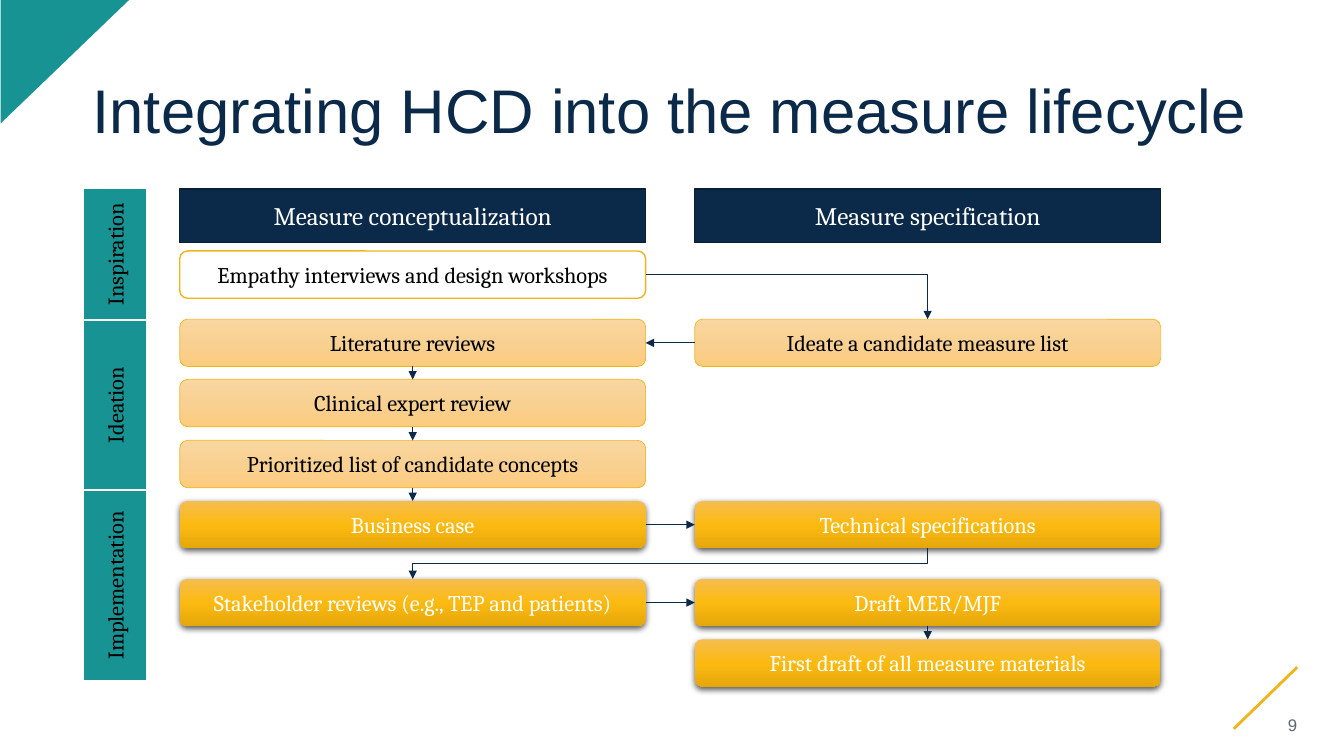
"""Builds the slide on human-centred design in the measure lifecycle."""
from lxml import etree
from pptx import Presentation
from pptx.dml.color import RGBColor
from pptx.enum.shapes import MSO_CONNECTOR as Link, MSO_SHAPE as Form
from pptx.enum.text import MSO_ANCHOR as Anchor, MSO_AUTO_SIZE as AutoSize, PP_ALIGN as Align
from pptx.oxml.ns import qn
from pptx.util import Pt

NAVY, TEAL, GOLD, WHITE, BLACK = "0B2949", "189394", "F1B51C", "FFFFFF", "000000"
TITLE = "Integrating HCD into the measure lifecycle"
PAGE_NUMBER = "9"
STAGES = [("Inspiration", 94.4), ("Ideation", 121.1), ("Implementation", 136.8)]
HEADERS = ["Measure conceptualization", "Measure specification"]
STYLES = {
    "plain": {"fill": WHITE, "line": GOLD, "weight": 1, "color": BLACK},
    "light": {"fill": ["FAD7A1", "F8D092", "FCCC7E"], "line": GOLD, "weight": 0.5, "color": BLACK},
    "strong": {"fill": ["F5BD4F", "FCBA11", "E5A70A"], "color": WHITE, "shadow": True},
}
STEPS = {
    "empathy": ("Empathy interviews and design workshops", 0, 0, "plain"),
    "ideate": ("Ideate a candidate measure list", 1, 1, "light"),
    "literature": ("Literature reviews", 0, 1, "light"),
    "expert": ("Clinical expert review", 0, 2, "light"),
    "concepts": ("Prioritized list of candidate concepts", 0, 3, "light"),
    "business": ("Business case", 0, 4, "strong"),
    "technical": ("Technical specifications", 1, 4, "strong"),
    "stakeholder": ("Stakeholder reviews (e.g., TEP and patients)", 0, 5, "strong"),
    "draft": ("Draft MER/MJF", 1, 5, "strong"),
    "materials": ("First draft of all measure materials", 1, 6, "strong"),
}
TOP, LEFT, BOTTOM, RIGHT = range(4)
FLOWS = [
    ("ideate", LEFT, "literature", RIGHT),
    ("literature", BOTTOM, "expert", TOP),
    ("expert", BOTTOM, "concepts", TOP),
    ("concepts", BOTTOM, "business", TOP),
    ("business", RIGHT, "technical", LEFT),
    ("draft", BOTTOM, "materials", TOP),
    ("stakeholder", RIGHT, "draft", LEFT),
]
COLUMNS = [128.4, 496.3]
ROWS = [179.3, 228, 271, 314.6, 357.9, 413.5, 456.7]
STEP_WIDTH, STEP_HEIGHT = 332.8, 33.8
HEADER_TOP, HEADER_HEIGHT = 135, 38.2
STAGE_TOP, STAGE_MIDDLE, STAGE_WIDTH = 134.3, 81.9, 46


def rgb(value):
    """Turn a hex string into a colour."""
    return RGBColor.from_string(value)


def write(box, text, size=16, font="Cambria", color=BLACK, align=Align.CENTER, margin=None):
    """Put one formatted paragraph into a shape."""
    frame = box.text_frame
    frame.word_wrap = True
    frame.auto_size = AutoSize.NONE
    frame.vertical_anchor = Anchor.MIDDLE
    if margin is not None:
        frame.margin_left = frame.margin_right = Pt(margin)
        frame.margin_top = frame.margin_bottom = Pt(margin)
    para = frame.paragraphs[0]
    para.alignment = align
    span = para.add_run()
    span.text = text
    span.font.size, span.font.name = Pt(size), font
    span.font.color.rgb = rgb(color)
    return para


def paint_gradient(box, colors):
    """Fill a shape from top to bottom with evenly spaced colours."""
    box.fill.gradient()
    box.fill.gradient_angle = 270
    stops = box.fill._fill._gradFill.find(qn("a:gsLst"))
    for stop in list(stops):
        stops.remove(stop)
    for index, color in enumerate(colors):
        stop = etree.SubElement(stops, qn("a:gs"), pos=str(index * 100000 // (len(colors) - 1)))
        etree.SubElement(stop, qn("a:srgbClr"), val=color)


def add_box(page, form, left, top, width, height, fill, line=None, weight=1, shadow=False):
    """Add a preset shape with its fill, outline and shadow."""
    box = page.shapes.add_shape(form, Pt(left), Pt(top), Pt(width), Pt(height))
    if isinstance(fill, list):
        paint_gradient(box, fill)
    else:
        box.fill.solid()
        box.fill.fore_color.rgb = rgb(fill)
    if line:
        box.line.color.rgb, box.line.width = rgb(line), Pt(weight)
    else:
        box.line.fill.background()
    box.shadow.inherit = False
    if shadow:
        effects = box._element.spPr.find(qn("a:effectLst"))
        outer = etree.SubElement(effects, qn("a:outerShdw"), blurRad=str(Pt(4.5)),
                                 dist=str(Pt(1.5)), dir="5400000", algn="ctr", rotWithShape="0")
        tint = etree.SubElement(outer, qn("a:srgbClr"), val=BLACK)
        etree.SubElement(tint, qn("a:alpha"), val="63000")
    return box


def add_line(page, kind, ends, color=NAVY, weight=0.5, arrow=True):
    """Add a connector between two points."""
    line = page.shapes.add_connector(kind, *[Pt(value) for value in ends])
    line.line.color.rgb, line.line.width = rgb(color), Pt(weight)
    if arrow:
        etree.SubElement(line.line._get_or_add_ln(), qn("a:tailEnd"), type="triangle")
    etree.SubElement(line._element.spPr, qn("a:effectLst"))
    return line


def join(page, boxes, start, start_side, end, end_side, kind=Link.STRAIGHT):
    """Link two steps with an arrow."""
    arrow = add_line(page, kind, (0, 0, 0, 0))
    arrow.begin_connect(boxes[start], start_side)
    arrow.end_connect(boxes[end], end_side)
    return arrow


def main():
    """Lay out the slide and save it."""
    deck = Presentation()
    deck.slide_width, deck.slide_height = Pt(960), Pt(540)
    page = deck.slides.add_slide(deck.slide_layouts[5])

    corner = add_box(page, Form.RIGHT_TRIANGLE, 2.2, -2.2, 88.6, 92.2, TEAL)
    corner.rotation = 90
    add_line(page, Link.STRAIGHT, (881.3, 520.6, 926.6, 476.6), GOLD, 2, arrow=False)

    title = page.shapes.title
    title.left, title.top, title.width, title.height = Pt(66.2), Pt(29.5), Pt(828), Pt(103)
    write(title, TITLE, size=44, font="Arial", color=NAVY, align=Align.LEFT,
          margin=0).line_spacing = 0.9

    for text, left in zip(HEADERS, COLUMNS):
        header = add_box(page, Form.RECTANGLE, left, HEADER_TOP, STEP_WIDTH, HEADER_HEIGHT,
                         NAVY, "081E36")
        write(header, text, size=18, color=WHITE)

    top = STAGE_TOP
    for text, length in STAGES:
        stage = add_box(page, Form.RECTANGLE, STAGE_MIDDLE - length / 2,
                        top + (length - STAGE_WIDTH) / 2, length, STAGE_WIDTH, TEAL, WHITE, 1.5)
        stage.rotation = 270
        write(stage, text)
        top += length

    boxes = {}
    for name, (text, column, row, style) in STEPS.items():
        look = dict(STYLES[style])
        color = look.pop("color")
        boxes[name] = add_box(page, Form.ROUNDED_RECTANGLE, COLUMNS[column], ROWS[row],
                              STEP_WIDTH, STEP_HEIGHT, **look)
        write(boxes[name], text, color=color)

    for flow in FLOWS:
        join(page, boxes, *flow)
    corner_arrow = join(page, boxes, "empathy", RIGHT, "ideate", TOP, Link.ELBOW)
    corner_arrow._element.spPr.find(qn("a:prstGeom")).set("prst", "bentConnector2")

    back_arrow = join(page, boxes, "technical", BOTTOM, "stakeholder", TOP, Link.ELBOW)
    across, down = back_arrow.width, back_arrow.height
    frame = back_arrow._element.spPr.find(qn("a:xfrm"))
    frame.attrib.pop("flipH", None)
    frame.set("rot", "5400000")
    back_arrow.left += (across - down) // 2
    back_arrow.top += (down - across) // 2
    back_arrow.width, back_arrow.height = down, across

    number = page.shapes.add_textbox(Pt(885.6), Pt(491), Pt(41), Pt(53))
    number.height = Pt(49)
    number.top = Pt(489 + 4.5)
    write(number, PAGE_NUMBER, size=12, font="Arial", color="5B6771", align=Align.RIGHT, margin=0)
    deck.save("out.pptx")


if __name__ == "__main__":
    main()
